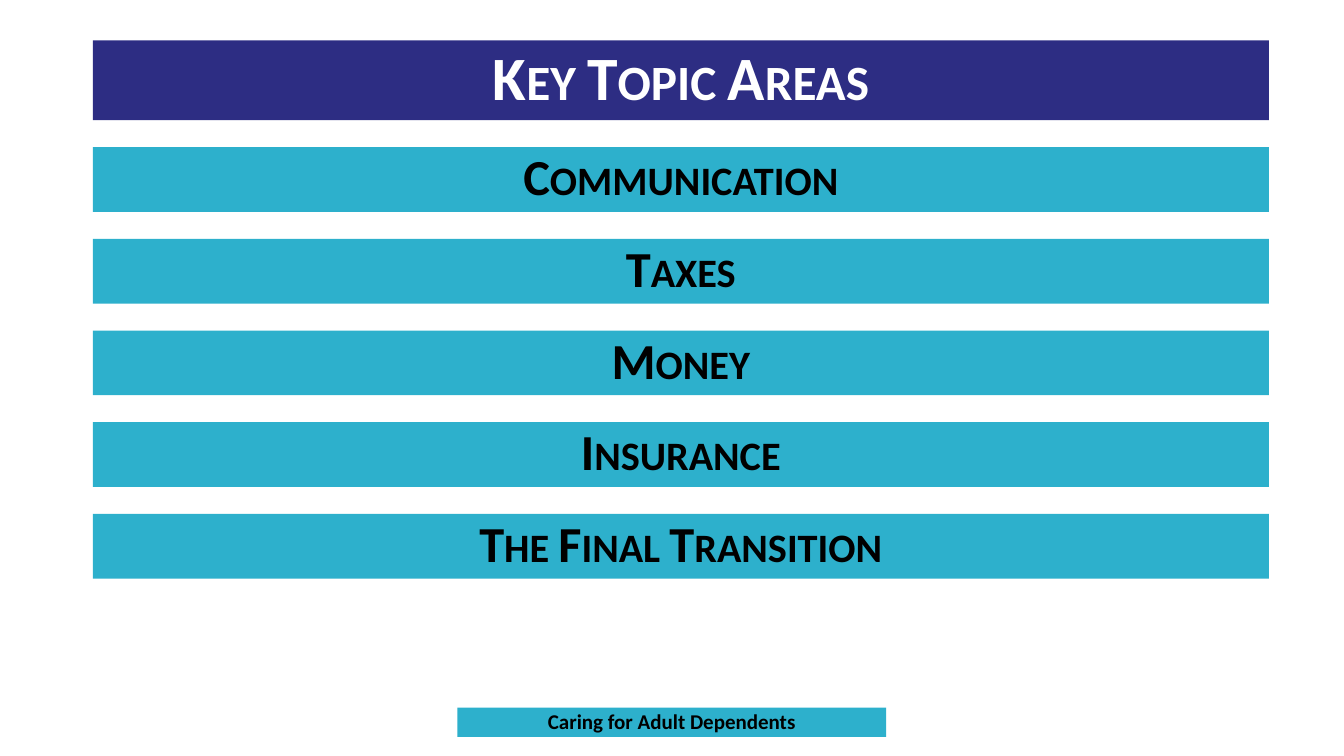
import pptx
import pptx.dml.color
import pptx.enum.shapes
import pptx.enum.text
import pptx.util
from dataclasses import dataclass

Cm = pptx.util.Cm

TITLE = "Key Topic Areas"
TOPICS = ["Communication", "Taxes", "Money", "Insurance", "The Final Transition"]
FOOTER = "Caring for Adult Dependents"


@dataclass(frozen=True)
class Theme:
    font: str = "Calibri"
    navy: str = "2D2D83"
    teal: str = "2DB0CC"
    white: str = "FFFFFF"
    black: str = "000000"
    title_size: int = 44
    topic_size: int = 36
    footer_size: int = 15


THEME = Theme()

# Lengths in centimetres
BAR_LEFT, BAR_WIDTH = 2.34, 29.64
TITLE_TOP, TITLE_HEIGHT = 1.02, 2.01
TOPIC_TOP, TOPIC_HEIGHT, TOPIC_GAP = 3.71, 1.63, 0.68
FOOTER_BOX = (11.53, 17.83, 10.8, 0.74)


def rgb(value):
    return pptx.dml.color.RGBColor.from_string(value)


def style_bar(sp, text, fill, color, size, small_caps=True):
    """Fill a bar and centre one bold line of text in it."""
    sp.fill.solid()
    sp.fill.fore_color.rgb = rgb(fill)
    sp.line.fill.background()
    tf = sp.text_frame
    tf.word_wrap = True
    tf.auto_size = pptx.enum.text.MSO_AUTO_SIZE.NONE
    tf.vertical_anchor = pptx.enum.text.MSO_ANCHOR.MIDDLE
    tf.margin_top = tf.margin_bottom = 0
    p = tf.paragraphs[0]
    p.alignment = pptx.enum.text.PP_ALIGN.CENTER
    p.line_spacing = 0.9
    r = p.add_run()
    r.text = text
    r.font.name = THEME.font
    r.font.size = pptx.util.Pt(size)
    r.font.bold = True
    r.font.color.rgb = rgb(color)
    if small_caps:
        r.font._element.set("cap", "small")


def add_bar(slide, left, top, width, height):
    sp = slide.shapes.add_shape(
        pptx.enum.shapes.MSO_SHAPE.RECTANGLE,
        Cm(left), Cm(top), Cm(width), Cm(height))
    sp.shadow.inherit = False
    return sp


def main():
    prs = pptx.Presentation()
    prs.slide_width, prs.slide_height = Cm(33.87), Cm(19.05)
    slide = prs.slides.add_slide(prs.slide_layouts[5])

    title = slide.shapes.title
    title.left, title.top = Cm(BAR_LEFT), Cm(TITLE_TOP)
    title.width, title.height = Cm(BAR_WIDTH), Cm(TITLE_HEIGHT)
    style_bar(title, TITLE, THEME.navy, THEME.white, THEME.title_size)

    for i, topic in enumerate(TOPICS):
        top = TOPIC_TOP + i * (TOPIC_HEIGHT + TOPIC_GAP)
        sp = add_bar(slide, BAR_LEFT, top, BAR_WIDTH, TOPIC_HEIGHT)
        style_bar(sp, topic, THEME.teal, THEME.black, THEME.topic_size)

    footer = add_bar(slide, *FOOTER_BOX)
    style_bar(footer, FOOTER, THEME.teal, THEME.black, THEME.footer_size, small_caps=False)

    prs.save("out.pptx")


if __name__ == "__main__":
    main()
